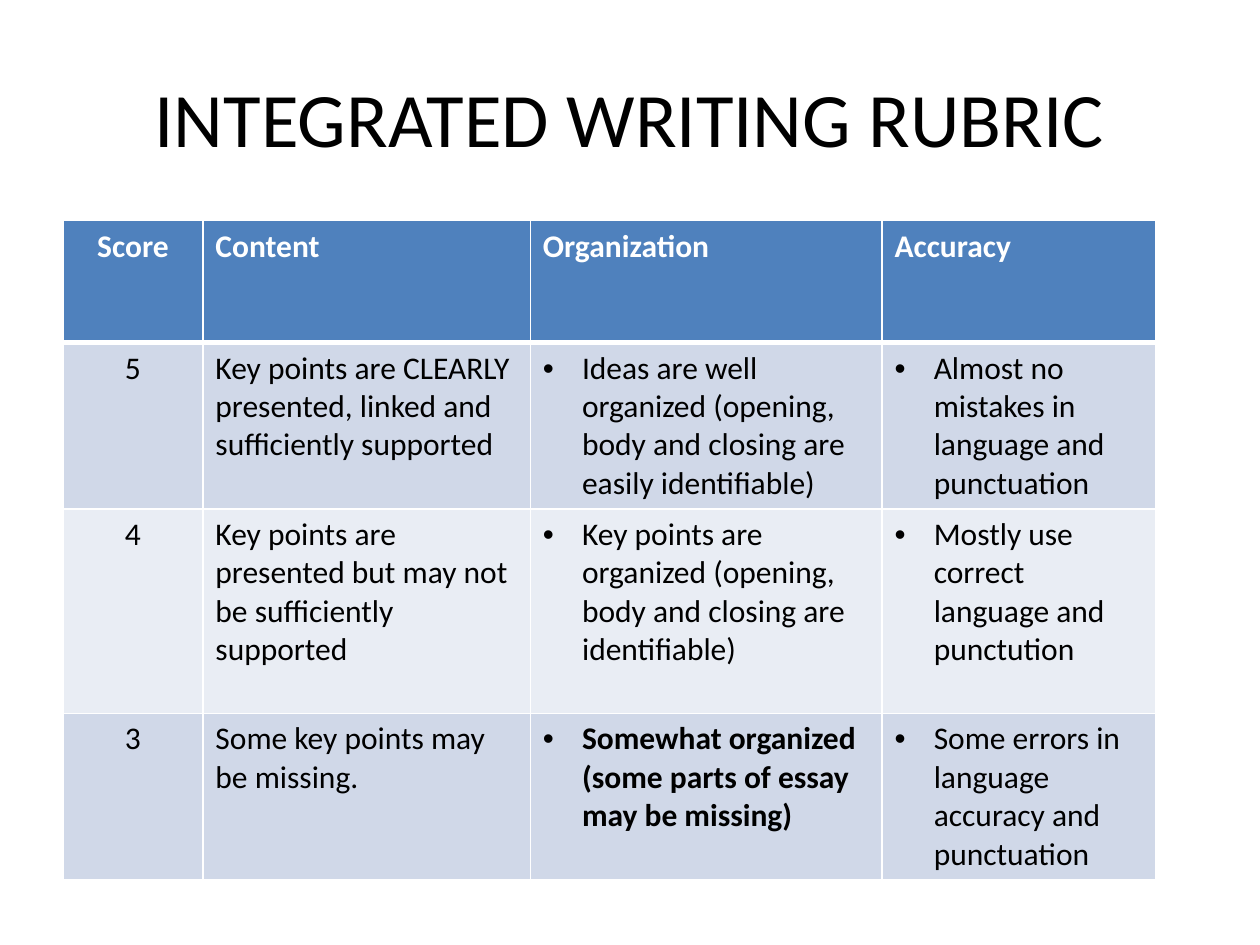
from dataclasses import dataclass

from lxml.etree import SubElement
from pptx import Presentation
from pptx.dml.color import RGBColor
from pptx.enum.text import MSO_ANCHOR, PP_ALIGN
from pptx.oxml.ns import qn
from pptx.util import Cm, Pt


@dataclass(frozen=True)
class Theme:
    font: str = "Calibri"
    head: str = "4F81BD"
    bands: tuple = ("D0D8E8", "E9EDF4")
    light: str = "FFFFFF"
    dark: str = "000000"
    title: int = 44
    body: int = 18
    thin: int = 1
    thick: int = 3


THEME = Theme()
COLS = (2.82, 6.6, 7.09, 5.51)
ROWS = (2.46, 3.35, 4.12, 3.35)
INDENT = Cm(0.79)
BOLD = (3, 2)
RUBRIC = (
    ("Score", "Content", "Organization", "Accuracy"),
    ("5",
     "Key points are CLEARLY presented, linked and sufficiently supported",
     "Ideas are well organized (opening, body and closing are easily identifiable)",
     "Almost no mistakes in language and punctuation"),
    ("4",
     "Key points are presented but may not be sufficiently supported",
     "Key points are organized (opening, body and closing are identifiable)",
     "Mostly use correct language and punctution"),
    ("3",
     "Some key points may be missing.",
     "Somewhat organized (some parts of essay may be missing)",
     "Some errors in language accuracy and punctuation"),
)


def apply(item, **values):
    for name, value in values.items():
        setattr(item, name, value)


def style(para, size, color, bold=False):
    apply(para.font, name=THEME.font, size=Pt(size), bold=bold)
    para.font.color.rgb = RGBColor.from_string(color)


def edge(cell, widths):
    """Draw the cell's borders; widths maps each side to points."""
    props = cell._tc.get_or_add_tcPr()
    for side, width in widths.items():
        line = SubElement(props, qn(f"a:ln{side}"), w=str(Pt(width)))
        fill = SubElement(line, qn("a:solidFill"))
        SubElement(fill, qn("a:srgbClr"), val=THEME.light)


def bullet(para):
    props = para._p.get_or_add_pPr()
    props.set("marL", str(INDENT))
    props.set("indent", str(-INDENT))
    SubElement(props, qn("a:buFont"), typeface="Arial")
    SubElement(props, qn("a:buChar"), char="•")


def add_title(slide, left, top, width, height):
    title = slide.shapes.title
    apply(title, left=Cm(left), top=Cm(top), width=Cm(width), height=Cm(height))
    title.text_frame.text = "INTEGRATED WRITING RUBRIC"
    title.text_frame.vertical_anchor = MSO_ANCHOR.MIDDLE
    para = title.text_frame.paragraphs[0]
    para.alignment = PP_ALIGN.CENTER
    style(para, THEME.title, THEME.dark)


def fill_cell(cell, row, col):
    head = row == 0
    edge(cell, {"L": THEME.thin, "R": THEME.thin,
                "T": THEME.thick if row == 1 else THEME.thin,
                "B": THEME.thick if head else THEME.thin})
    cell.fill.solid()
    shade = THEME.head if head else THEME.bands[(row - 1) % 2]
    cell.fill.fore_color.rgb = RGBColor.from_string(shade)
    cell.text = RUBRIC[row][col]
    para = cell.text_frame.paragraphs[0]
    para.alignment = PP_ALIGN.LEFT if col else PP_ALIGN.CENTER
    style(para, THEME.body, THEME.light if head else THEME.dark,
          head or (row, col) == BOLD)
    if not head and col >= 2:
        bullet(para)


def add_rubric(slide, left, top):
    table = slide.shapes.add_table(
        len(ROWS), len(COLS), Cm(left), Cm(top),
        Cm(sum(COLS)), Cm(sum(ROWS))).table
    for col, width in zip(table.columns, COLS):
        col.width = Cm(width)
    for row, height in zip(table.rows, ROWS):
        row.height = Cm(height)
    for row in range(len(ROWS)):
        for col in range(len(COLS)):
            fill_cell(table.cell(row, col), row, col)


def main():
    deck = Presentation()
    apply(deck, slide_width=Cm(25.4), slide_height=Cm(19.05))
    slide = deck.slides.add_slide(deck.slide_layouts[5])
    add_title(slide, 1.27, 0.76, 22.86, 3.18)
    add_rubric(slide, 1.27, 4.45)
    deck.save("out.pptx")


if __name__ == "__main__":
    main()
